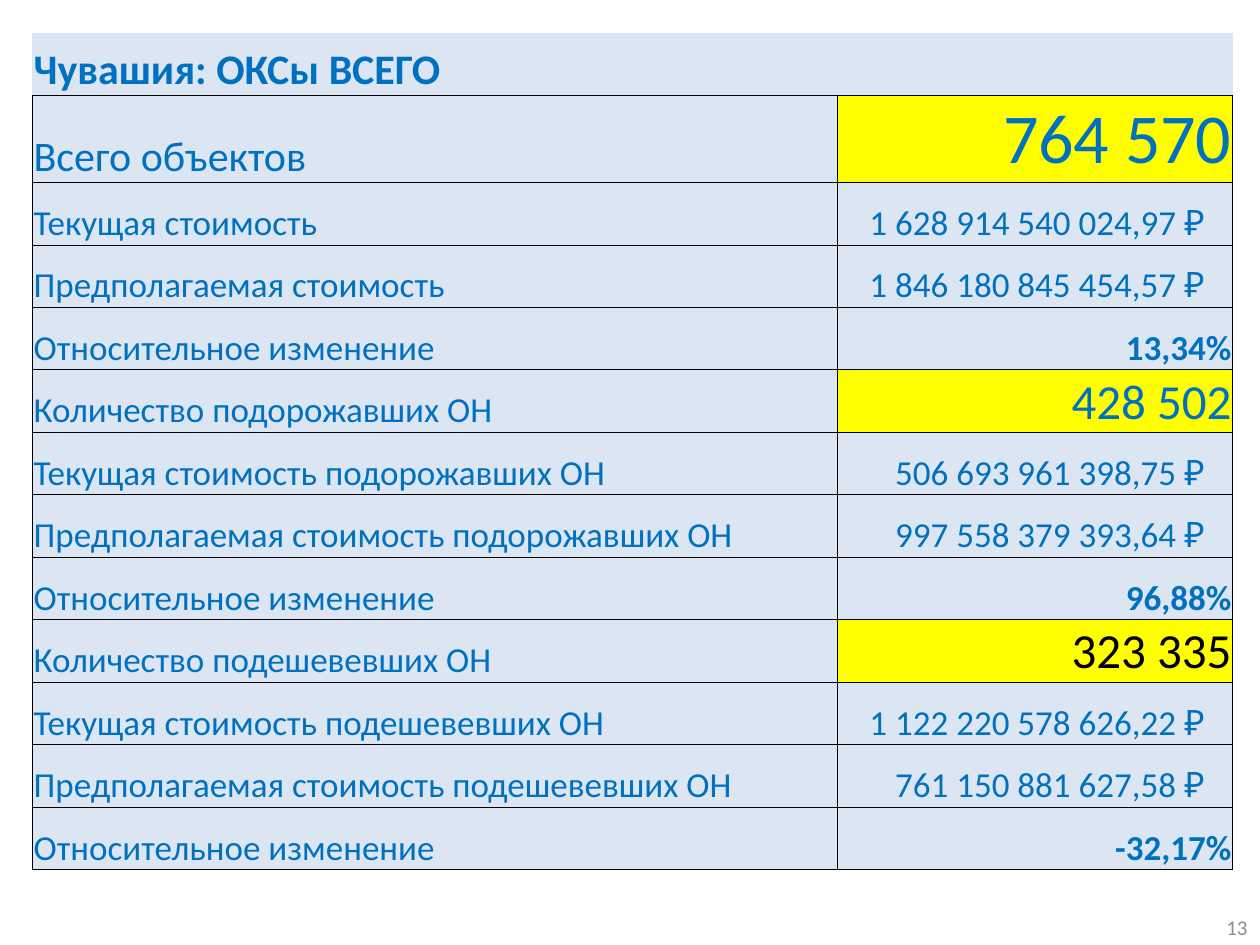
from lxml.etree import SubElement
from pptx import Presentation
from pptx.dml.color import RGBColor
from pptx.enum.text import MSO_ANCHOR as Anchor, PP_ALIGN as Align
from pptx.oxml.ns import qn
from pptx.util import Pt

BLUE = RGBColor(0x00, 0x70, 0xC0)
PALE_BLUE = RGBColor(0xDC, 0xE6, 0xF2)
YELLOW = RGBColor(0xFF, 0xFF, 0x00)
BLACK = RGBColor(0x00, 0x00, 0x00)
GREY = RGBColor(0x8C, 0x8C, 0x8C)

FONT = "Calibri"
TITLE = "Чувашия: ОКСы ВСЕГО"
COLUMN_WIDTHS = (460, 226)
ROW_HEIGHT = 35.7
TOTAL_ROW_HEIGHT = 49.7
CELL_INSET = 0.75
AMOUNT_INSET = 16

# Label, value, kind of value
INDICATORS = [
    ("Всего объектов", "764 570", "total"),
    ("Текущая стоимость", "1 628 914 540 024,97 ₽", "amount"),
    ("Предполагаемая стоимость", "1 846 180 845 454,57 ₽", "amount"),
    ("Относительное изменение", "13,34%", "change"),
    ("Количество подорожавших ОН", "428 502", "risen"),
    ("Текущая стоимость подорожавших ОН", "506 693 961 398,75 ₽", "amount"),
    ("Предполагаемая стоимость подорожавших ОН", "997 558 379 393,64 ₽", "amount"),
    ("Относительное изменение", "96,88%", "change"),
    ("Количество подешевевших ОН", "323 335", "fallen"),
    ("Текущая стоимость подешевевших ОН", "1 122 220 578 626,22 ₽", "amount"),
    ("Предполагаемая стоимость подешевевших ОН", "761 150 881 627,58 ₽", "amount"),
    ("Относительное изменение", "-32,17%", "change"),
]
VALUE_STYLES = {
    "total": dict(size=40, fill=YELLOW),
    "risen": dict(size=28, fill=YELLOW),
    "fallen": dict(size=28, fill=YELLOW, color=BLACK),
    "amount": dict(right_inset=AMOUNT_INSET),
    "change": dict(bold=True),
}


def write_text(frame, text, size, color, bold=False, align=Align.LEFT):
    frame.text = text
    para = frame.paragraphs[0]
    para.alignment = align
    for span in para.runs:
        span.font.name = FONT
        span.font.size = Pt(size)
        span.font.bold = bold
        span.font.color.rgb = color


def set_borders(cell, visible):
    """Draw the named sides (L, R, T, B) in black and hide the others."""
    properties = cell._tc.get_or_add_tcPr()
    for side in "LRTB":
        line = SubElement(properties, qn(f"a:ln{side}"), w=str(Pt(0.5)))
        if side in visible:
            fill = SubElement(line, qn("a:solidFill"))
            SubElement(fill, qn("a:srgbClr"), val=str(BLACK))
        else:
            SubElement(line, qn("a:noFill"))


def fill_cell(cell, text, size=20, color=BLUE, bold=False, align=Align.LEFT,
              fill=PALE_BLUE, right_inset=CELL_INSET, borders="LRTB"):
    set_borders(cell, borders)
    cell.fill.solid()
    cell.fill.fore_color.rgb = fill
    cell.vertical_anchor = Anchor.BOTTOM
    cell.margin_left = cell.margin_top = Pt(CELL_INSET)
    cell.margin_right = Pt(right_inset)
    cell.margin_bottom = 0
    write_text(cell.text_frame, text, size, color, bold, align)


def add_indicator_table(slide):
    row_count = len(INDICATORS) + 1
    height = ROW_HEIGHT * (row_count - 1) + TOTAL_ROW_HEIGHT
    table = slide.shapes.add_table(row_count, 2, Pt(18.5), Pt(18.9),
                                   Pt(sum(COLUMN_WIDTHS)), Pt(height)).table
    table.first_row = table.horz_banding = False
    for column, width in zip(table.columns, COLUMN_WIDTHS):
        column.width = Pt(width)
    for row in table.rows:
        row.height = Pt(ROW_HEIGHT)
    table.rows[1].height = Pt(TOTAL_ROW_HEIGHT)

    fill_cell(table.cell(0, 0), TITLE, size=24, bold=True, borders="B")
    fill_cell(table.cell(0, 1), "", borders="B")
    for index, (label, value, kind) in enumerate(INDICATORS, start=1):
        fill_cell(table.cell(index, 0), label, size=24 if kind == "total" else 20)
        fill_cell(table.cell(index, 1), value, align=Align.RIGHT, **VALUE_STYLES[kind])


def add_page_number(slide, number):
    box = slide.shapes.add_textbox(Pt(689), Pt(519), Pt(31), Pt(22))
    frame = box.text_frame
    frame.word_wrap = True
    frame.vertical_anchor = Anchor.MIDDLE
    write_text(frame, number, 12, GREY, align=Align.RIGHT)


def main():
    deck = Presentation()
    deck.slide_width, deck.slide_height = Pt(720), Pt(540)
    slide = deck.slides.add_slide(deck.slide_layouts[6])
    add_page_number(slide, "13")
    add_indicator_table(slide)
    deck.save("out.pptx")


if __name__ == "__main__":
    main()
